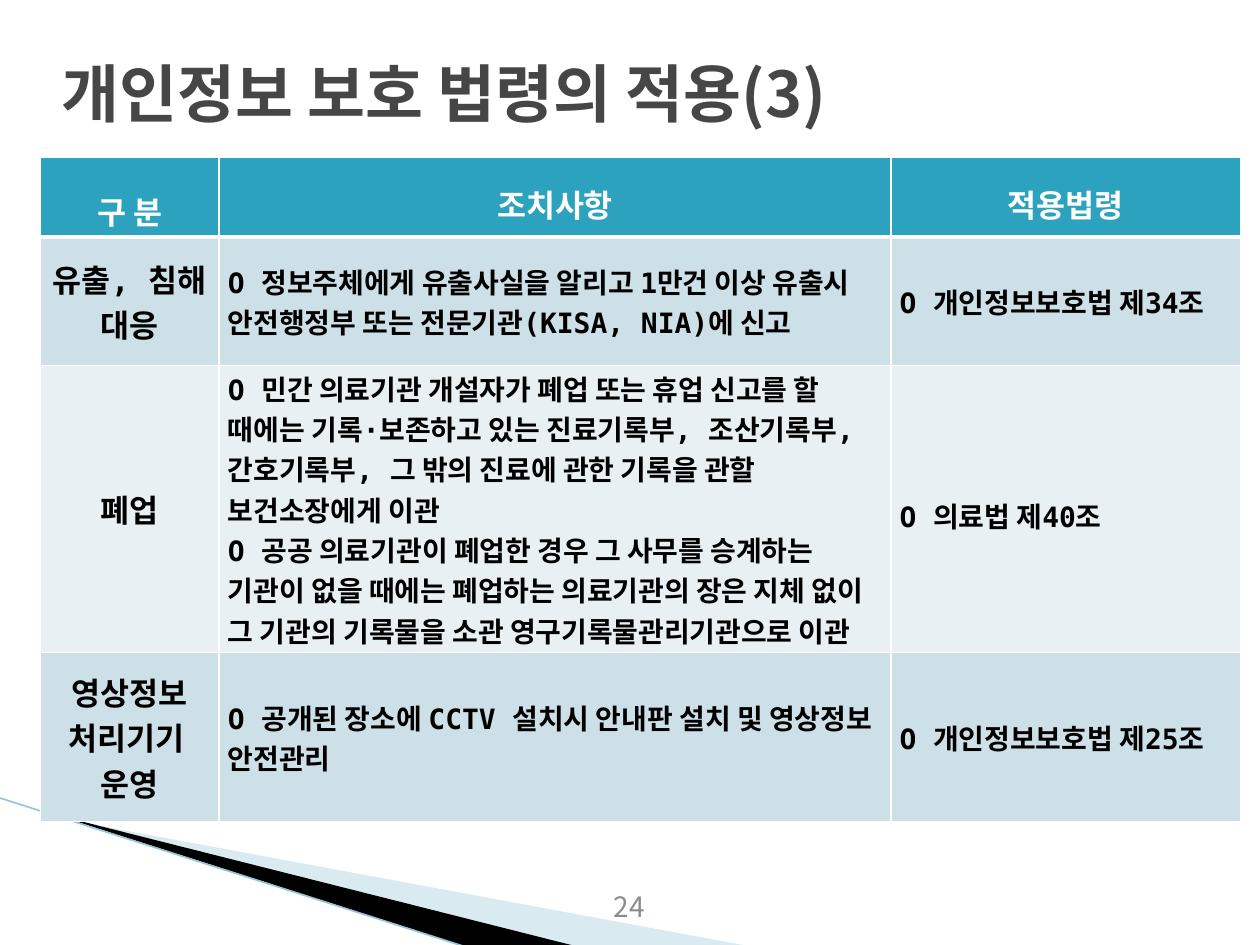
import pptx
import pptx.dml.color
import pptx.enum.shapes
import pptx.enum.text
import pptx.oxml
import pptx.oxml.ns
import pptx.util

Pt = pptx.util.Pt
RGBColor = pptx.dml.color.RGBColor
ALIGN = pptx.enum.text.PP_ALIGN
MIDDLE = pptx.enum.text.MSO_ANCHOR.MIDDLE

WHITE = RGBColor(0xFF, 0xFF, 0xFF)
BLACK = RGBColor(0x00, 0x00, 0x00)
HEADER_TEAL = RGBColor(0x2D, 0xA2, 0xBF)
BAND_DARK = RGBColor(0xCD, 0xE0, 0xE8)
BAND_LIGHT = RGBColor(0xE8, 0xF0, 0xF4)
TITLE_GRAY = RGBColor(0x46, 0x46, 0x46)
NUMBER_GRAY = RGBColor(0x8C, 0x8C, 0x8C)
WEDGE_BLUE = RGBColor(0xA0, 0xCB, 0xDC)
EDGE_BLUE = RGBColor(0x97, 0xC5, 0xD8)

KOREAN_FONT = "Noto Sans CJK KR"
MONO_FONT = "DejaVu Sans Mono"
CELL_FORMAT = {"margin_left": Pt(5.04), "margin_right": Pt(5.04),
               "margin_top": Pt(1.44), "margin_bottom": Pt(1.44),
               "vertical_anchor": MIDDLE}
HEADER = {"alignment": ALIGN.CENTER, "line_spacing": 1.3}
LABEL = {"alignment": ALIGN.CENTER}
DETAIL = {"alignment": ALIGN.LEFT}
JUSTIFIED = {"alignment": ALIGN.JUSTIFY, "line_spacing": 1.3}

COLUMN_WIDTHS = (102.24, 383.76, 200.16)
ROW_HEIGHTS = (45.36, 73.44, 119.52, 96.48)
HEADINGS = ("구 분", "조치사항", "적용법령")
MEASURES = (
    (["유출, 침해 대응"],
     ["O 정보주체에게 유출사실을 알리고 1만건 이상 유출시 안전행정부 또는 전문기관(KISA, NIA)에 신고"],
     ["O 개인정보보호법 제34조"]),
    (["폐업"],
     ["O 민간 의료기관 개설자가 폐업 또는 휴업 신고를 할 때에는 기록·보존하고 있는 진료기록부, "
      "조산기록부, 간호기록부, 그 밖의 진료에 관한 기록을 관할 보건소장에게 이관",
      "O 공공 의료기관이 폐업한 경우 그 사무를 승계하는 기관이 없을 때에는 폐업하는 의료기관의 장은 "
      "지체 없이 그 기관의 기록물을 소관 영구기록물관리기관으로 이관"],
     ["O 의료법 제40조"]),
    (["영상정보", "처리기기 ", "운영"],
     ["O 공개된 장소에 CCTV 설치시 안내판 설치 및 영상정보 안전관리"],
     ["O 개인정보보호법 제25조"]),
)


def set_attributes(target, values):
    """Set every attribute named in a dict of format values."""
    for name, value in values.items():
        setattr(target, name, value)


def write_paragraphs(frame, lines, layout, font, color):
    """Write lines into a text frame, one paragraph each."""
    for index, line in enumerate(lines):
        paragraph = frame.add_paragraph() if index else frame.paragraphs[0]
        set_attributes(paragraph, layout)
        run = paragraph.add_run()
        run.text = line
        set_attributes(run.font, font)
        run.font.color.rgb = color
        east_asian = run.font._element.makeelement(
            pptx.oxml.ns.qn("a:ea"), {"typeface": KOREAN_FONT})
        run.font._element.find(pptx.oxml.ns.qn("a:latin")).addnext(east_asian)


def add_label(slide, box, text, layout, font, color, anchor):
    """Add a wrapped text box holding one line."""
    frame = slide.shapes.add_textbox(*map(Pt, box)).text_frame
    set_attributes(frame, {"word_wrap": True, "vertical_anchor": anchor})
    write_paragraphs(frame, [text], layout, font, color)


def add_wedge(slide, corners, color, opacity=100):
    """Add a filled outline through the corners."""
    points = [(Pt(x), Pt(y)) for x, y in corners]
    builder = slide.shapes.build_freeform(*points[0])
    builder.add_line_segments(points[1:], close=True)
    wedge = builder.convert_to_shape()
    wedge.shadow.inherit = False
    wedge.line.fill.background()
    wedge.fill.solid()
    wedge.fill.fore_color.rgb = color
    if opacity < 100:
        tint = wedge.fill._xPr.find(".//" + pptx.oxml.ns.qn("a:srgbClr"))
        tint.append(tint.makeelement(
            pptx.oxml.ns.qn("a:alpha"), {"val": str(opacity * 1000)}))


def add_edge(slide, start, end, color, width):
    """Add a straight line without a shadow."""
    edge = slide.shapes.add_connector(
        pptx.enum.shapes.MSO_CONNECTOR.STRAIGHT, *map(Pt, start + end))
    edge.line.color.rgb = color
    edge.line.width = Pt(width)
    properties = edge._element.spPr
    properties.append(properties.makeelement(pptx.oxml.ns.qn("a:effectLst"), {}))


def set_borders(cell, widths):
    """Give a cell white borders with widths in points by side."""
    properties = cell._tc.get_or_add_tcPr()
    for side, width in widths.items():
        properties.append(pptx.oxml.parse_xml(
            f'<a:ln{side} {pptx.oxml.ns.nsdecls("a")} w="{Pt(width)}">'
            f'<a:solidFill><a:srgbClr val="{WHITE}"/></a:solidFill></a:ln{side}>'))


def fill_cell(cell, lines, layout, size, color, background, borders):
    """Format one table cell and write its paragraphs."""
    set_attributes(cell, CELL_FORMAT)
    set_borders(cell, borders)
    cell.fill.solid()
    cell.fill.fore_color.rgb = background
    font = {"name": MONO_FONT, "size": Pt(size), "bold": True}
    write_paragraphs(cell.text_frame, lines, layout, font, color)


def add_measures_table(slide):
    """Add the table of measures and the laws that apply."""
    table = slide.shapes.add_table(
        len(ROW_HEIGHTS), len(COLUMN_WIDTHS), Pt(23.04), Pt(90),
        Pt(sum(COLUMN_WIDTHS)), Pt(sum(ROW_HEIGHTS))).table
    for column, width in zip(table.columns, COLUMN_WIDTHS):
        column.width = Pt(width)
    for row, height in zip(table.rows, ROW_HEIGHTS):
        row.height = Pt(height)
    for column, heading in enumerate(HEADINGS):
        layout = HEADER if column else HEADER | {"line_spacing": 1.6}
        fill_cell(table.cell(0, column), [heading], layout, 18, WHITE,
                  HEADER_TEAL, {"L": 1, "R": 1, "T": 1, "B": 3})
    for row, measure in enumerate(MEASURES, 1):
        background = BAND_DARK if row % 2 else BAND_LIGHT
        borders = {"L": 1, "R": 1, "T": 3 if row == 1 else 1, "B": 1}
        for column, lines in enumerate(measure):
            layout = DETAIL if column else LABEL
            if (row, column) == (2, 2):
                layout = JUSTIFIED
            fill_cell(table.cell(row, column), lines, layout,
                      16 if column else 18, BLACK, background, borders)


def main():
    """Build the slide and save it."""
    presentation = pptx.Presentation()
    set_attributes(presentation, {"slide_width": Pt(720), "slide_height": Pt(540)})
    slide = presentation.slides.add_slide(presentation.slide_layouts[6])
    add_wedge(slide, [(39.6, 468.7), (428.4, 540.7), (328.3, 540.7), (39.6, 468)],
              WEDGE_BLUE, 40)
    add_wedge(slide, [(38.2, 467.3), (329, 540.7), (267.8, 541.4), (38.9, 468)], BLACK)
    add_edge(slide, (-0.7, 455.8), (267.1, 541.4), EDGE_BLUE, 0.95)
    add_measures_table(slide)
    add_label(slide, (28, 16.5, 648, 72), "개인정보 보호 법령의 적용(3)", DETAIL,
              {"name": KOREAN_FONT, "size": Pt(36), "bold": True}, TITLE_GRAY, MIDDLE)
    add_label(slide, (275.8, 504.7, 167.8, 28.8), "24", LABEL,
              {"name": KOREAN_FONT, "size": Pt(16)}, NUMBER_GRAY,
              pptx.enum.text.MSO_ANCHOR.TOP)
    presentation.save("out.pptx")


if __name__ == "__main__":
    main()
